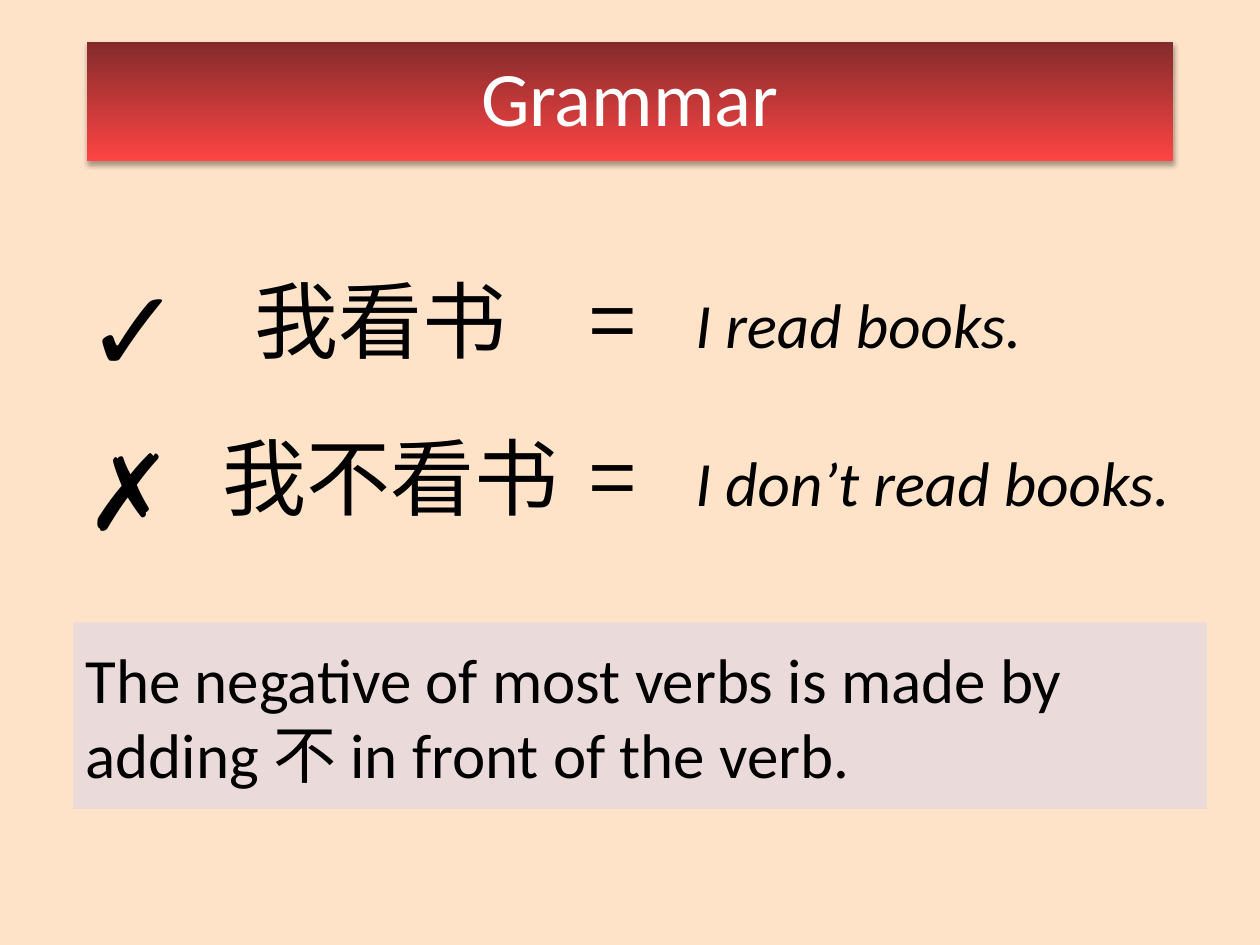
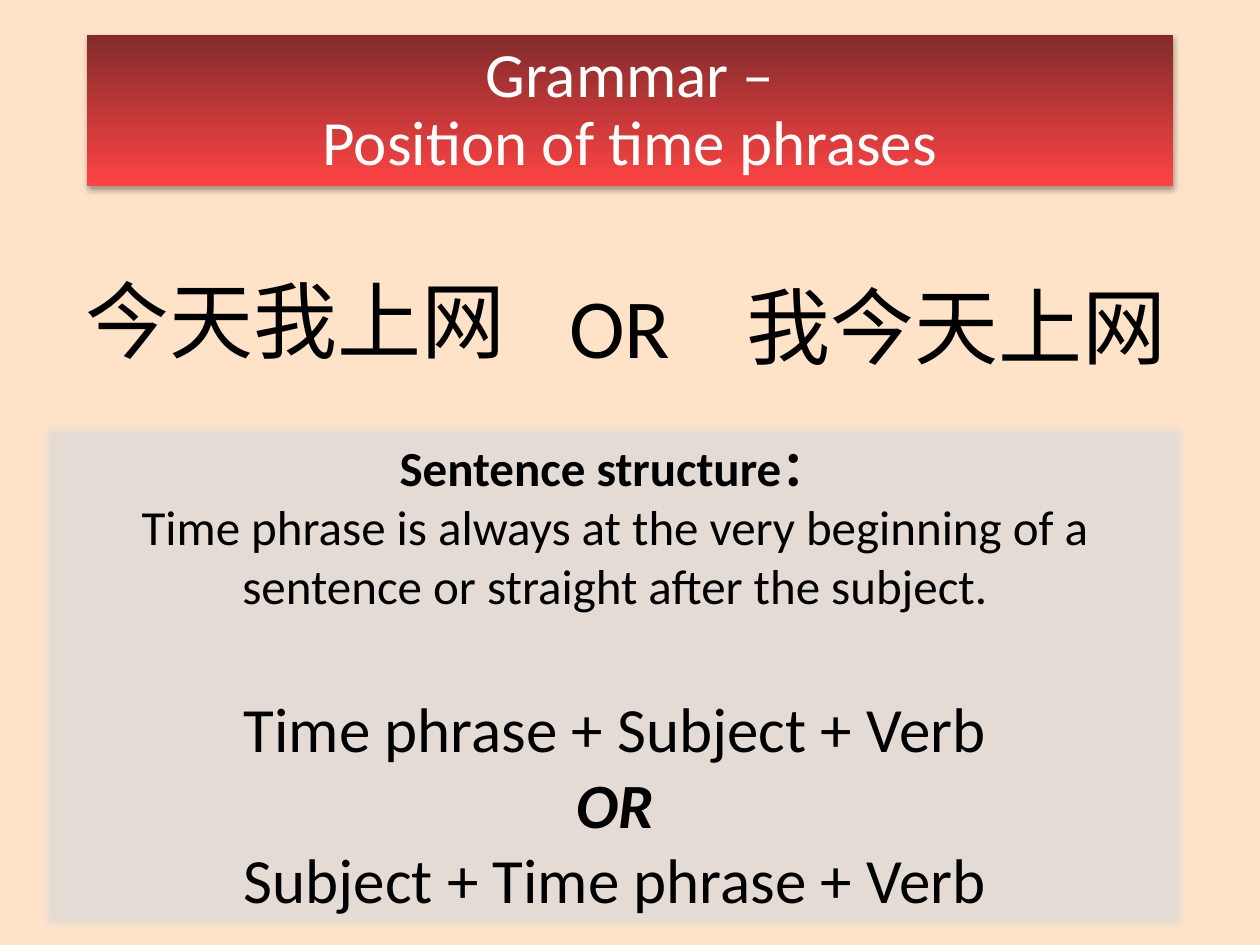
from lxml.etree import SubElement
from pptx import Presentation
from pptx.dml.color import RGBColor
from pptx.enum.shapes import MSO_SHAPE
from pptx.enum.text import MSO_ANCHOR, MSO_AUTO_SIZE, PP_ALIGN
from pptx.oxml.ns import qn
from pptx.util import Inches, Pt

COLORS = {
    "background": "FFE3C9",
    "band_bottom": "FE4444",
    "band_top": "832B2B",
    "title": "FFFFFF",
    "text": "000000",
    "rule_panel": "D1D1F0",
    "structure_panel": "D9D9D9",
    "shadow": "000000",
}
LATIN = "Calibri"
CHINESE = "Noto Sans CJK SC"
SYMBOL = "Arial"


def rgb(name):
    return RGBColor.from_string(COLORS[name])


def place(sp, box):
    sp.left, sp.top, sp.width, sp.height = (Inches(v) for v in box)


def style(p, size, font=LATIN, color="text", bold=False, italic=False):
    """Format a paragraph, naming the font for East Asian text as well."""
    f = p.font
    f.name, f.size, f.bold, f.italic = font, Pt(size), bold, italic
    f.color.rgb = rgb(color)
    if font != LATIN:
        def_rpr = p._p.get_or_add_pPr().find(qn("a:defRPr"))
        SubElement(def_rpr, qn("a:ea"), typeface=font)


def add_title(s, lines, box, size):
    """Turn the title placeholder into the red gradient band."""
    sp = s.shapes.title
    place(sp, box)
    sp.fill.gradient()
    sp.fill.gradient_angle = 90
    for stop, name in zip(sp.fill.gradient_stops, ("band_bottom", "band_top")):
        stop.color.rgb = rgb(name)
        stop.position = 0 if name == "band_bottom" else 1
    effects = SubElement(sp._element.spPr, qn("a:effectLst"))
    shadow = SubElement(effects, qn("a:outerShdw"), blurRad=str(Pt(3.1)),
                        dist=str(Pt(1.8)), dir="5400000", rotWithShape="0")
    color = SubElement(shadow, qn("a:srgbClr"), val=COLORS["shadow"])
    SubElement(color, qn("a:alpha"), val="35000")

    tf = sp.text_frame
    tf.text = "\n".join(lines)
    tf.auto_size = MSO_AUTO_SIZE.NONE
    tf.vertical_anchor = MSO_ANCHOR.MIDDLE
    for p in tf.paragraphs:
        p.alignment = PP_ALIGN.CENTER
        p.line_spacing = 0.9
        style(p, size, color="title")


def add_text(s, text, box, size, font=LATIN, italic=False):
    sp = s.shapes.add_textbox(*(Inches(v) for v in box))
    tf = sp.text_frame
    tf.word_wrap = True
    p = tf.paragraphs[0]
    p.text = text
    style(p, size, font, italic=italic)


def add_panel(s, box, fill, opacity):
    """Add a translucent rectangle and return it."""
    sp = s.shapes.add_shape(MSO_SHAPE.RECTANGLE, *(Inches(v) for v in box))
    sp.shadow.inherit = False
    sp.fill.solid()
    sp.fill.fore_color.rgb = rgb(fill)
    color = sp._element.spPr.find(".//" + qn("a:srgbClr"))
    SubElement(color, qn("a:alpha"), val=str(opacity * 1000))
    sp.line.fill.background()
    sp.text_frame.word_wrap = True
    sp.text_frame.vertical_anchor = MSO_ANCHOR.MIDDLE
    return sp


def add_example(s, top, mark, mark_top, mark_size, chinese, indent, english):
    """Add one row: mark, Chinese sentence, equals sign, translation."""
    add_text(s, mark, (0.58, mark_top, 0.92, 1.2), mark_size, SYMBOL)
    add_text(s, chinese, (indent, top, 3.08, 0.91), 48, CHINESE)
    add_text(s, "=", (4.58, top, 0.84, 0.91), 48, CHINESE)
    add_text(s, english, (5.42, top + 0.14, 4.5, 0.71), 36, italic=True)


def add_rule(s, box):
    p = add_panel(s, box, "rule_panel", 44).text_frame.paragraphs[0]
    p.text = "The negative of most verbs is made by adding 不 in front of the verb."
    p.alignment = PP_ALIGN.LEFT
    style(p, 36)


def add_structure(s, box):
    sp = add_panel(s, box, "structure_panel", 70)
    effects = sp._element.spPr.find(qn("a:effectLst"))
    SubElement(effects, qn("a:softEdge"), rad=str(Pt(5)))
    lines = [
        ("Sentence structure：", 28, True, False, 0),
        ("Time phrase is always at the very beginning of a sentence "
         "or straight after the subject.", 28, False, False, 0),
        ("Time phrase + Subject + Verb", 36, False, False, 43),
        ("OR", 36, True, True, 0),
        ("Subject + Time phrase + Verb", 36, False, False, 0),
    ]
    tf = sp.text_frame
    for i, (text, size, bold, italic, gap) in enumerate(lines):
        p = tf.add_paragraph() if i else tf.paragraphs[0]
        p.text = text
        p.alignment = PP_ALIGN.CENTER
        p.space_before = Pt(gap)
        style(p, size, bold=bold, italic=italic)


def build_negation(s):
    add_title(s, ["Grammar"], (0.69, 0.33, 8.62, 0.95), 44)
    add_example(s, 2.08, "✓", 1.99, 66, "我看书", 1.92, "I read books.")
    add_example(s, 3.33, "✗", 3.33, 60, "我不看书", 1.67, "I don’t read books.")
    add_rule(s, (0.58, 4.94, 9, 1.48))


def build_time_phrases(s):
    add_title(s, ["Grammar –", "Position of time phrases"],
              (0.69, 0.28, 8.62, 1.2), 36)
    add_text(s, "今天我上网", (0.58, 2.08, 3.67, 0.91), 48, CHINESE)
    add_text(s, "OR", (4.42, 2.13, 1.59, 0.91), 48)
    add_text(s, "我今天上网", (5.83, 2.13, 4.1, 0.91), 48, CHINESE)
    add_structure(s, (0.3, 3.34, 9.16, 4.07))


def main():
    prs = Presentation()
    prs.slide_width, prs.slide_height = Inches(10), Inches(7.5)
    background = prs.slide_master.background.fill
    background.solid()
    background.fore_color.rgb = rgb("background")
    title_only = prs.slide_layouts[5]
    for build in (build_negation, build_time_phrases):
        build(prs.slides.add_slide(title_only))
    prs.save("out.pptx")


if __name__ == "__main__":
    main()
